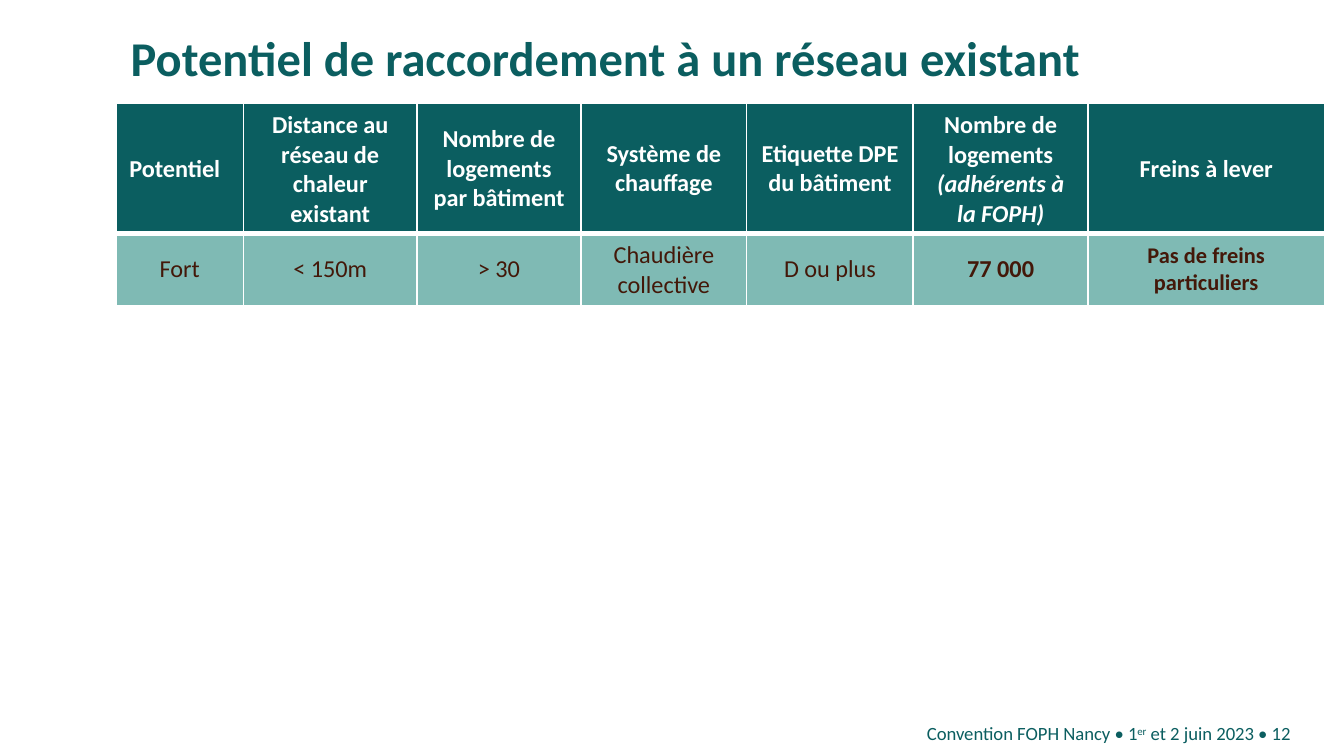
from lxml import etree
from pptx import Presentation
from pptx.dml.color import RGBColor
from pptx.enum.text import MSO_ANCHOR, PP_ALIGN
from pptx.oxml.ns import qn
from pptx.util import Cm, Pt

LEFT, CENTER, RIGHT = PP_ALIGN.LEFT, PP_ALIGN.CENTER, PP_ALIGN.RIGHT
TOP, MIDDLE = MSO_ANCHOR.TOP, MSO_ANCHOR.MIDDLE

FONT = "Calibri"
TEAL, MINT, BROWN, WHITE = "0B5E60", "7FBAB4", "431809", "FFFFFF"


def color(hex_code):
    return RGBColor.from_string(hex_code)


def add_text(paragraph, text, size=13, ink=TEAL, bold=False, italic=False, raised=0):
    """Append a formatted run; raised is the superscript offset in percent."""
    run = paragraph.add_run()
    run.text = text
    font = run.font
    font.name, font.size = FONT, Pt(size)
    font.bold, font.italic = bold, italic
    font.color.rgb = color(ink)
    if raised:
        run._r.get_or_add_rPr().set("baseline", str(raised * 1000))


class SlideBuilder:
    def __init__(self, slide):
        self.slide = slide

    def text_box(self, left, top, width, height, runs, align=LEFT, anchor=TOP,
                 spacing=None, **style):
        box = self.slide.shapes.add_textbox(Cm(left), Cm(top), Cm(width), Cm(height))
        frame = box.text_frame
        frame.word_wrap = True
        frame.vertical_anchor = anchor
        frame.margin_left = frame.margin_right = 0
        frame.margin_top = frame.margin_bottom = 0
        paragraph = frame.paragraphs[0]
        paragraph.alignment = align
        paragraph.line_spacing = spacing
        for text, extra in runs:
            add_text(paragraph, text, **{**style, **extra})

    def table(self, left, top, widths, heights):
        frame = self.slide.shapes.add_table(
            len(heights), len(widths), Cm(left), Cm(top),
            Cm(sum(widths)), Cm(sum(heights)))
        table = frame.table
        table.horz_banding = False
        for column, width in zip(table.columns, widths):
            column.width = Cm(width)
        for row, height in zip(table.rows, heights):
            row.height = Cm(height)
        return table

    def cell(self, cell, runs, fill, align=CENTER, top=1, bottom=1, **style):
        cell.vertical_anchor = MIDDLE
        self.borders(cell, L=1, R=1, T=top, B=bottom)
        cell.fill.solid()
        cell.fill.fore_color.rgb = color(fill)
        paragraph = cell.text_frame.paragraphs[0]
        paragraph.alignment = align
        for text, extra in runs:
            add_text(paragraph, text, **{**style, **extra})

    def borders(self, cell, **widths):
        properties = cell._tc.get_or_add_tcPr()
        for side, width in widths.items():
            line = etree.SubElement(properties, qn(f"a:ln{side}"), w=str(Pt(width)))
            solid = etree.SubElement(line, qn("a:solidFill"))
            etree.SubElement(solid, qn("a:srgbClr"), val=WHITE)


def main():
    prs = Presentation()
    prs.slide_width, prs.slide_height = Cm(25.4), Cm(14.29)
    builder = SlideBuilder(prs.slides.add_slide(prs.slide_layouts[6]))

    # Title
    builder.text_box(2.47, 0.7, 22.25, 2.2,
                     [("Potentiel de raccordement à un réseau existant", {})],
                     spacing=0.85, size=26, bold=True)

    # Connection potential: width, heading runs, value runs
    columns = [
        (2.41, [("Potentiel", {})], [("Fort", {})]),
        (3.28, [("Distance au réseau de chaleur existant", {})], [("< 150m", {})]),
        (3.1, [("Nombre de logements par bâtiment", {})], [("> 30", {})]),
        (3.13, [("Système de chauffage", {})], [("Chaudière collective", {})]),
        (3.15, [("Etiquette DPE du bâtiment", {})], [("D ou plus", {})]),
        (3.3, [("Nombre de logements ", {}), ("(adhérents à la FOPH)", {"italic": True})],
         [("77 000", {"bold": True})]),
        (4.47, [("Freins à lever", {})],
         [("Pas de freins particuliers", {"bold": True, "size": 12})]),
    ]
    potential = builder.table(2.19, 1.96, [width for width, _, _ in columns], [2.45, 1.32])
    for index, (_, heading, value) in enumerate(columns):
        builder.cell(potential.cell(0, index), heading, TEAL, bottom=3,
                     align=CENTER if index else LEFT, ink=WHITE, bold=True)
        builder.cell(potential.cell(1, index), value, MINT, top=3, ink=BROWN)

    # Footer and page number
    builder.text_box(8.69, 13.67, 15.01, 0.38,
                     [("Convention FOPH Nancy • 1", {}), ("er", {"raised": 30}),
                      (" et 2 juin 2023", {})],
                     align=RIGHT, anchor=MIDDLE, size=10)
    builder.text_box(23.7, 13.67, 0.99, 0.38, [(" • 12", {})], anchor=MIDDLE, size=10)

    prs.save("out.pptx")


if __name__ == "__main__":
    main()
